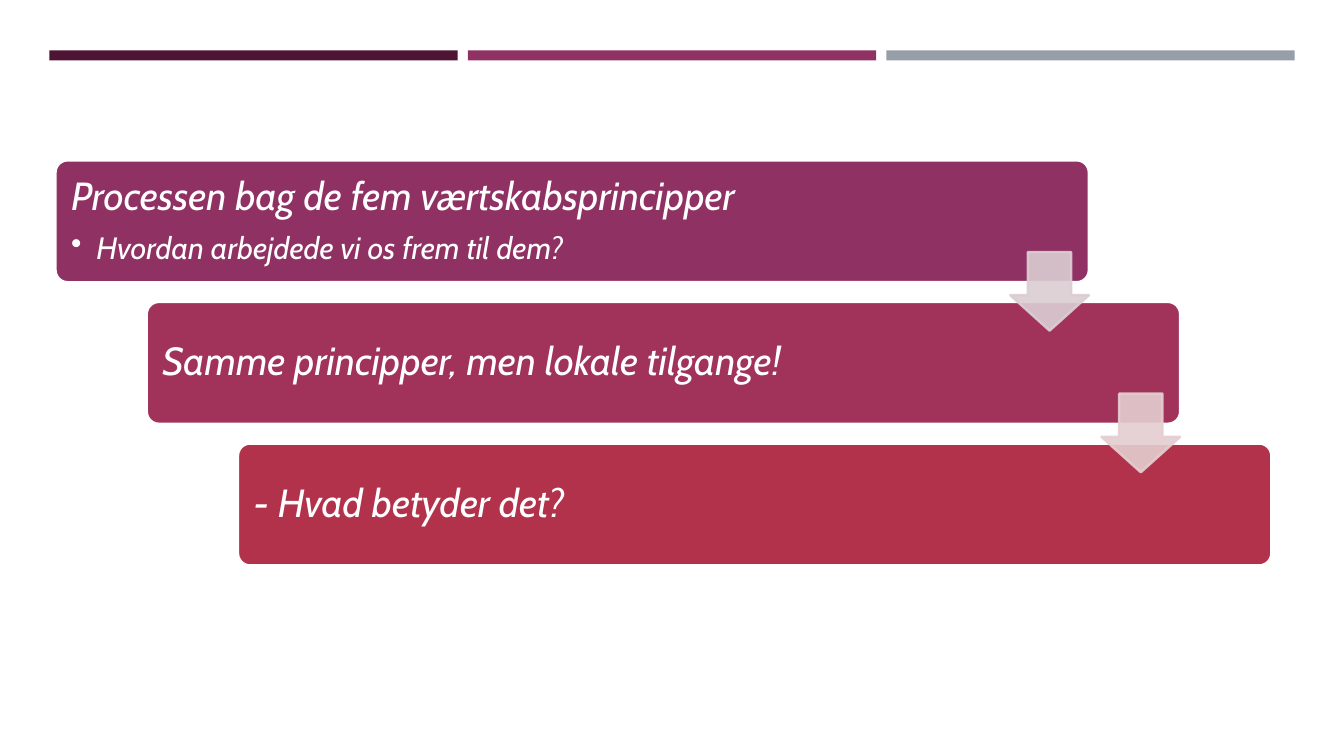
from lxml.etree import SubElement
from pptx import Presentation
from pptx.dml.color import RGBColor
from pptx.enum.shapes import MSO_SHAPE
from pptx.enum.text import MSO_ANCHOR, PP_ALIGN
from pptx.oxml.ns import qn
from pptx.util import Inches, Pt


def add_block(page, kind, left, top, width, height, fill, line=None, adjust=(), opacity=100):
    block = page.shapes.add_shape(kind, Inches(left), Inches(top), Inches(width), Inches(height))
    block.shadow.inherit = False
    for index, value in enumerate(adjust):
        block.adjustments[index] = value
    block.fill.solid()
    block.fill.fore_color.rgb = RGBColor.from_string(fill)
    if line:
        block.line.color.rgb = RGBColor.from_string(line)
        block.line.width = Pt(1.75)
    else:
        block.line.fill.background()
    if opacity < 100:
        for color in block._element.spPr.iter(qn("a:srgbClr")):
            SubElement(color, qn("a:alpha"), val=str(opacity * 1000))
    return block


def write_text(para, text, size, space_after, bullet=False):
    para.alignment = PP_ALIGN.LEFT
    para.line_spacing = 0.9
    para.space_after = Pt(space_after)
    if bullet:
        properties = para._p.get_or_add_pPr()
        properties.set("marL", str(Inches(0.25)))
        properties.set("indent", str(Inches(-0.25)))
        SubElement(properties, qn("a:buChar"), char="•")
    span = para.add_run()
    span.text = text
    span.font.name = "Cabin"
    span.font.size = Pt(size)
    span.font.italic = True
    span.font.color.rgb = RGBColor.from_string("FFFFFF")


deck = Presentation()
deck.slide_width = Inches(13.33)
deck.slide_height = Inches(7.5)
page = deck.slides.add_slide(deck.slide_layouts[6])

# Three bars across the top
for index, color in enumerate(["4D1434", "903163", "969FA7"]):
    add_block(page, MSO_SHAPE.RECTANGLE, 0.49 + index * 4.15, 0.5, 4.05, 0.1, color)

# Staircase of steps: heading, bullet, fill
steps = [
    ("Processen bag de fem værtskabsprincipper", "Hvordan arbejdede vi os frem til dem?", "903163"),
    ("Samme principper, men lokale tilgange!", None, "A1325A"),
    ("- Hvad betyder det?", None, "B2324B"),
]
step_right, step_down = 0.905, 1.405
for index, (heading, bullet, color) in enumerate(steps):
    box = add_block(page, MSO_SHAPE.ROUNDED_RECTANGLE, 0.55 + index * step_right,
                    1.59 + index * step_down, 10.25, 1.21, color, "FFFFFF", [0.1])
    frame = box.text_frame
    frame.word_wrap = True
    frame.vertical_anchor = MSO_ANCHOR.MIDDLE
    # The rounded corner adds about 0.04 inch to each margin
    frame.margin_left = frame.margin_right = Inches(0.12)
    frame.margin_top = frame.margin_bottom = Inches(0.12)
    write_text(frame.paragraphs[0], heading, 28, 9.8)
    if bullet:
        write_text(frame.add_paragraph(), bullet, 22, 3.3, bullet=True)

# Arrows from each step to the next
for index, color in enumerate(["DBCED3", "E4CED0"]):
    add_block(page, MSO_SHAPE.DOWN_ARROW, 10.02 + index * step_right, 2.5 + index * step_down,
              0.78, 0.78, color, color, [0.55, 0.45], opacity=90)

# The down arrow lists its shaft width first and its head length second
for arrow in list(page.shapes)[-2:]:
    arrow.adjustments[0], arrow.adjustments[1] = 0.55, 0.45

deck.save("out.pptx")
